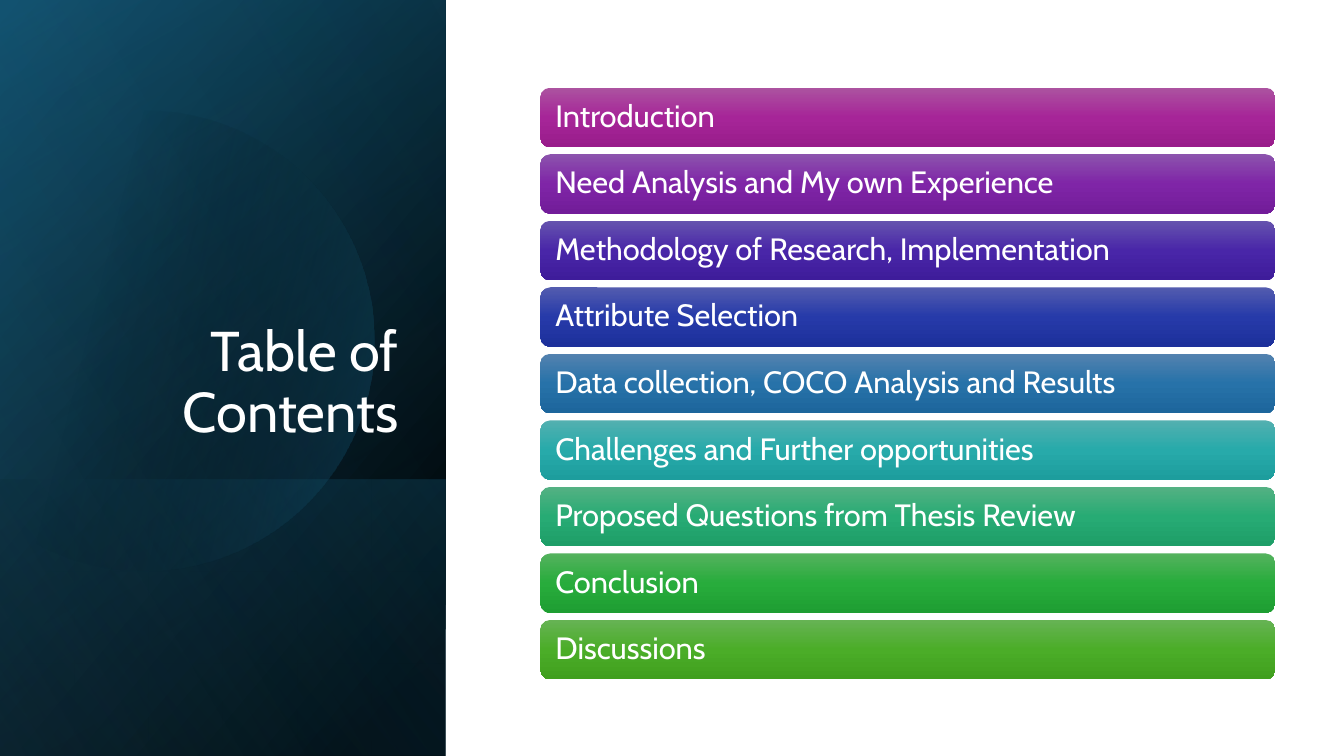
from math import acos, cos, sin

from lxml import etree
from pptx import Presentation
from pptx.dml.color import RGBColor
from pptx.enum.shapes import MSO_SHAPE
from pptx.enum.text import MSO_ANCHOR, MSO_AUTO_SIZE, PP_ALIGN
from pptx.oxml.ns import qn
from pptx.util import Inches, Pt

RECT, ROUNDED = MSO_SHAPE.RECTANGLE, MSO_SHAPE.ROUNDED_RECTANGLE
LEFT, RIGHT = PP_ALIGN.LEFT, PP_ALIGN.RIGHT
MIDDLE, BOTTOM = MSO_ANCHOR.MIDDLE, MSO_ANCHOR.BOTTOM

FONT = "Cabin"
WHITE = RGBColor(0xFF, 0xFF, 0xFF)
BLACK = RGBColor(0x00, 0x00, 0x00)
NAVY = RGBColor(0x10, 0x48, 0x62)
TEAL = RGBColor(0x15, 0x60, 0x82)
SKY = RGBColor(0x46, 0xB1, 0xE1)

# Each topic with the top, middle and bottom colour of its bar
TOPICS = [
    ("Introduction", RGBColor(0xAC, 0x53, 0xA0),
     RGBColor(0xA6, 0x25, 0x98), RGBColor(0x99, 0x1C, 0x8B)),
    ("Need Analysis and My own Experience", RGBColor(0x8C, 0x53, 0xAD),
     RGBColor(0x7F, 0x25, 0xA7), RGBColor(0x72, 0x1C, 0x99)),
    ("Methodology of Research, Implementation", RGBColor(0x65, 0x53, 0xAE),
     RGBColor(0x49, 0x26, 0xA8), RGBColor(0x3E, 0x1C, 0x9A)),
    ("Attribute Selection", RGBColor(0x53, 0x5C, 0xAF),
     RGBColor(0x26, 0x3A, 0xA9), RGBColor(0x1D, 0x30, 0x9B)),
    ("Data collection, COCO Analysis and Results", RGBColor(0x53, 0x82, 0xAF),
     RGBColor(0x27, 0x72, 0xA9), RGBColor(0x1D, 0x66, 0x9C)),
    ("Challenges and Further opportunities", RGBColor(0x53, 0xB0, 0xB0),
     RGBColor(0x27, 0xAA, 0xAA), RGBColor(0x1D, 0x9D, 0x9D)),
    ("Proposed Questions from Thesis Review", RGBColor(0x54, 0xB1, 0x83),
     RGBColor(0x27, 0xAB, 0x74), RGBColor(0x1E, 0x9E, 0x68)),
    ("Conclusion", RGBColor(0x54, 0xB2, 0x5E),
     RGBColor(0x28, 0xAC, 0x3C), RGBColor(0x1E, 0x9E, 0x32)),
    ("Discussions", RGBColor(0x66, 0xB3, 0x54),
     RGBColor(0x4B, 0xAD, 0x28), RGBColor(0x40, 0x9F, 0x1E)),
]


def set_gradient(sp, stops, angle):
    """Fill with (position %, colour, opacity %) stops, angle clockwise."""
    sp.shadow.inherit = False
    sp.line.fill.background()
    sp.fill.gradient()
    sp.fill.gradient_angle = 360 - angle
    stop_list = sp._element.spPr.find(qn("a:gradFill")).find(qn("a:gsLst"))
    for old in list(stop_list):
        stop_list.remove(old)
    for pos, color, opacity in stops:
        gs = etree.SubElement(stop_list, qn("a:gs"), pos=str(pos * 1000))
        clr = etree.SubElement(gs, qn("a:srgbClr"), val=str(color))
        if opacity < 100:
            etree.SubElement(clr, qn("a:alpha"), val=str(opacity * 1000))


def set_text(sp, text, size, align=LEFT, anchor=MIDDLE, inset=0.1):
    tf = sp.text_frame
    tf.word_wrap = True
    tf.auto_size = MSO_AUTO_SIZE.NONE
    tf.vertical_anchor = anchor
    tf.margin_left = tf.margin_right = Inches(inset)
    tf.margin_top = tf.margin_bottom = Inches(0.05)
    p = tf.paragraphs[0]
    p.alignment = align
    p.line_spacing = 0.9
    r = p.add_run()
    r.text = text
    r.font.name = FONT
    r.font.size = Pt(size)
    r.font.color.rgb = WHITE


def add_turned_panel(s, x, y, w, h, stops, angle):
    """Cover the box with a mirrored rectangle turned a quarter."""
    sp = s.shapes.add_shape(RECT, Inches(x + (w - h) / 2),
                            Inches(y + (h - w) / 2), Inches(h), Inches(w))
    sp.rotation = 90
    sp._element.spPr.find(qn("a:xfrm")).set("flipH", "1")
    set_gradient(sp, stops, angle)


def add_cut_circle(s, cx, cy, radius, edge, stops, angle):
    """Draw the part of a circle to the right of a vertical edge."""
    end, steps = acos((edge - cx) / radius), 120
    turns = [end * (2 * i / steps - 1) for i in range(steps + 1)]
    points = [(Inches(cx + radius * cos(t)), Inches(cy + radius * sin(t)))
              for t in turns]
    builder = s.shapes.build_freeform(*points[0])
    builder.add_line_segments(points[1:], close=True)
    set_gradient(builder.convert_to_shape(), stops, angle)


def add_title_panel(s, x, y, w, h):
    # Layered backdrop
    add_turned_panel(s, x, y, w, h, [(8, BLACK, 100), (100, NAVY, 100)], 50)
    add_turned_panel(s, x, y, w, h, [(0, BLACK, 0), (99, TEAL, 46)], 30)
    add_turned_panel(s, x, y + 4.76, w, h - 4.76,
                     [(2, TEAL, 29), (100, BLACK, 30)], 130)
    add_cut_circle(s, x + 1.43, y + 3.38, 2.28, x,
                   [(29, BLACK, 0), (100, TEAL, 43)], 14)
    add_turned_panel(s, x, y, w, h, [(0, BLACK, 0), (99, SKY, 11)], 120)

    # Title, brought in front of the backdrop
    title = s.shapes.title
    title.left, title.top = Inches(x + 0.64), Inches(y + 1.84)
    title.width, title.height = Inches(3.41), Inches(2.62)
    set_text(title, "Table of Contents", 40, align=RIGHT, anchor=BOTTOM)
    s.shapes._spTree.append(title._element)


def add_topic_bars(s, x, y, w, pitch, bar_height):
    for i, (topic, top, middle, bottom) in enumerate(TOPICS):
        sp = s.shapes.add_shape(ROUNDED, Inches(x), Inches(y + i * pitch),
                                Inches(w), Inches(bar_height))
        set_gradient(sp, [(0, top, 100), (50, middle, 100),
                          (100, bottom, 100)], 90)
        set_text(sp, topic, 22, inset=0.12)


def main():
    prs = Presentation()
    prs.slide_width, prs.slide_height = Inches(13.33), Inches(7.5)
    s = prs.slides.add_slide(prs.slide_layouts[5])
    add_title_panel(s, 0, 0, 4.42, 7.5)
    add_topic_bars(s, 5.36, 0.87, 7.29, pitch=0.66, bar_height=0.59)
    prs.save("out.pptx")


if __name__ == "__main__":
    main()
